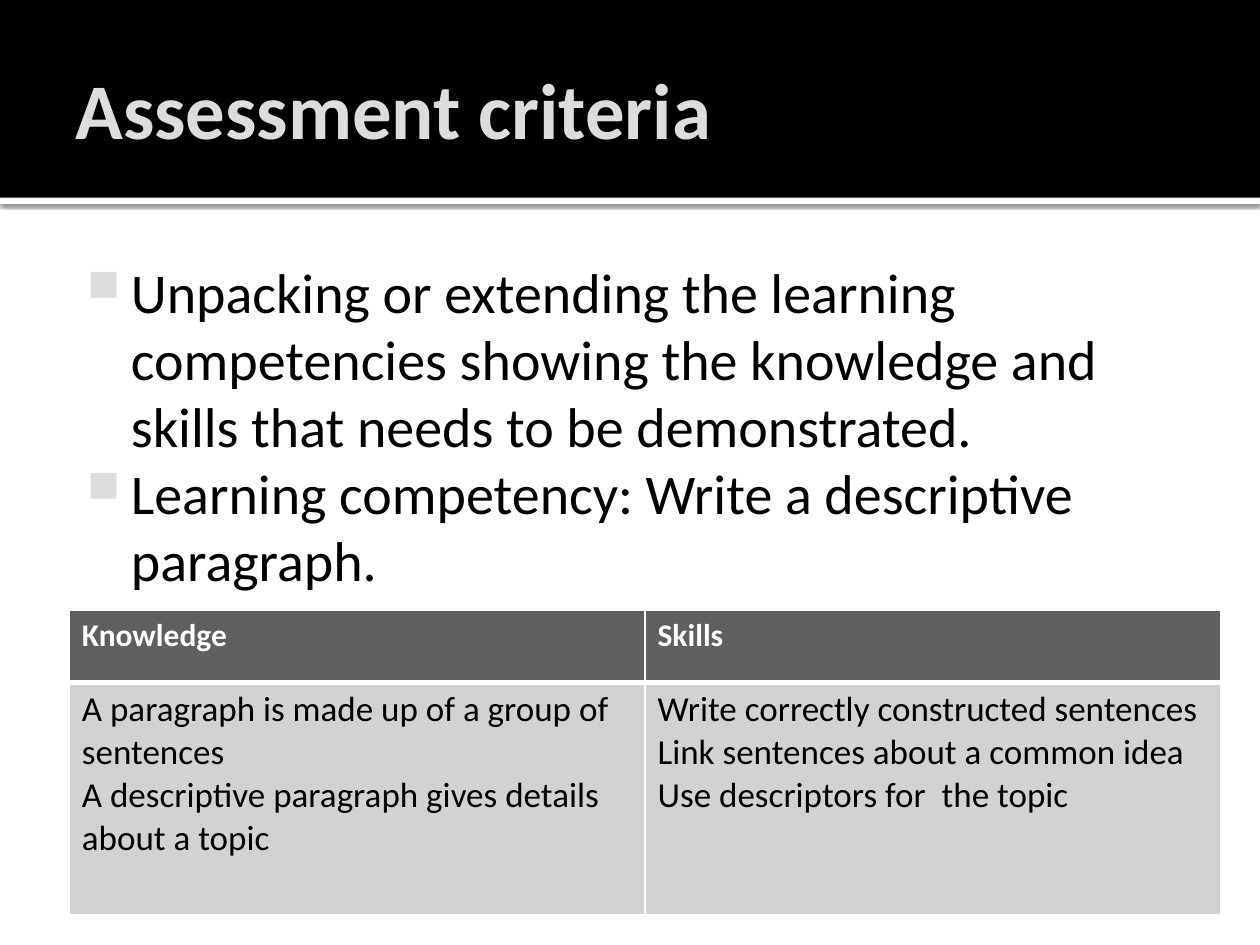
"""Build the assessment criteria slide: title band, two bullets and a table."""
from dataclasses import dataclass
from typing import Any

from lxml import etree
from pptx import Presentation
from pptx.dml.color import RGBColor
from pptx.enum import shapes, text
from pptx.oxml import parse_xml
from pptx.oxml.ns import nsdecls, qn
from pptx.util import Pt


@dataclass(frozen=True)
class Theme:
    font: str = "Calibri"
    black: str = "000000"
    white: str = "FFFFFF"
    pale: str = "DDDDDD"
    header: str = "5F5F5F"
    cell: str = "D2D2D2"
    title_size: float = 45
    body_size: float = 32
    header_size: float = 18
    cell_size: float = 20


@dataclass(frozen=True)
class Box:
    left: float
    top: float
    width: float
    height: float

    def lengths(self) -> tuple:
        return tuple(Pt(v) for v in (self.left, self.top, self.width, self.height))


@dataclass(frozen=True)
class Band:
    box: Box
    color: str
    shadow: bool = False


@dataclass(frozen=True)
class Row:
    height: float
    fill: str
    size: float
    color: str
    bold: bool
    borders: dict
    cells: tuple


T = Theme()
BANDS = (
    Band(Box(0, 113, 720, 3.6), T.white, shadow=True),
    Band(Box(0, 0, 720, 113), T.black),
)
TITLE_BOX = Box(36, 12.2, 648, 98.6)
BODY_BOX = Box(36, 139.7, 648, 364.3)
TABLE_BOX = Box(39.6, 348.5, 658, 174.4)
BULLETS = (
    "Unpacking or extending the learning competencies showing the knowledge "
    "and skills that needs to be demonstrated.",
    "Learning competency: Write a descriptive paragraph.",
)
ROWS = (
    Row(41.4, T.header, T.header_size, T.white, True,
        {"L": 1, "R": 1, "T": 1, "B": 3}, (("Knowledge",), ("Skills",))),
    Row(133, T.cell, T.cell_size, T.black, False,
        {"L": 1, "R": 1, "T": 3, "B": 1},
        (("A paragraph is made up of a group of sentences",
          "A descriptive paragraph gives details about a topic"),
         ("Write correctly constructed sentences",
          "Link sentences about a common idea",
          "Use descriptors for  the topic"))),
)


def apply(obj: Any, values: dict) -> None:
    for name, value in values.items():
        setattr(obj, name, value)


def write(tf: Any, lines: tuple, size: float, color: str, bold: bool) -> None:
    for i, line in enumerate(lines):
        p = tf.paragraphs[0] if i == 0 else tf.add_paragraph()
        r = p.add_run()
        r.text = line
        apply(r.font, {"name": T.font, "size": Pt(size), "bold": bold})
        r.font.color.rgb = RGBColor.from_string(color)


def frame(tf: Any, anchor: Any, insets: tuple) -> None:
    names = ("margin_left", "margin_top", "margin_right", "margin_bottom")
    apply(tf, {"word_wrap": True, "auto_size": text.MSO_AUTO_SIZE.NONE,
               "vertical_anchor": anchor, **dict(zip(names, map(Pt, insets)))})


def add_band(s: Any, band: Band) -> None:
    sp = s.shapes.add_shape(shapes.MSO_SHAPE.RECTANGLE, *band.box.lengths())
    sp.fill.solid()
    sp.fill.fore_color.rgb = RGBColor.from_string(band.color)
    sp.line.fill.background()
    sp.shadow.inherit = False
    if band.shadow:
        effects = sp.element.spPr.find(qn("a:effectLst"))
        effects.append(parse_xml(
            f'<a:outerShdw {nsdecls("a")} blurRad="{Pt(2.5)}" dist="{Pt(0.8)}" '
            f'dir="5400000" algn="tl" rotWithShape="0"><a:srgbClr val="{T.black}">'
            '<a:alpha val="60000"/></a:srgbClr></a:outerShdw>'))


def add_title(s: Any, title: str) -> None:
    sp = s.shapes.title
    apply(sp, dict(zip(("left", "top", "width", "height"), TITLE_BOX.lengths())))
    frame(sp.text_frame, text.MSO_ANCHOR.MIDDLE, (7.2, 3.6, 3.6, 3.6))
    write(sp.text_frame, (title,), T.title_size, T.pale, True)
    sp.text_frame.paragraphs[0].alignment = text.PP_ALIGN.LEFT
    sp.element.getparent().append(sp.element)


def add_bullets(s: Any, lines: tuple) -> None:
    tf = s.shapes.add_textbox(*BODY_BOX.lengths()).text_frame
    frame(tf, text.MSO_ANCHOR.TOP, (4.3, 7.2, 7.2, 3.6))
    write(tf, lines, T.body_size, T.black, False)
    for p in tf.paragraphs:
        pr = p._p.get_or_add_pPr()
        pr.set("marL", str(Pt(34.5)))
        pr.set("indent", str(Pt(-25.2)))
        color = etree.SubElement(pr, qn("a:buClr"))
        etree.SubElement(color, qn("a:srgbClr"), val=T.pale)
        etree.SubElement(pr, qn("a:buSzPct"), val="80000")
        etree.SubElement(pr, qn("a:buChar"), char="■")


def add_border(cell: Any, side: str, width: float) -> None:
    pr = cell._tc.get_or_add_tcPr()
    ln = etree.SubElement(pr, qn(f"a:ln{side}"), w=str(Pt(width)))
    fill = etree.SubElement(ln, qn("a:solidFill"))
    etree.SubElement(fill, qn("a:srgbClr"), val=T.white)


def add_criteria(s: Any, rows: tuple) -> None:
    count = len(rows[0].cells)
    table = s.shapes.add_table(len(rows), count, *TABLE_BOX.lengths()).table
    table.horz_banding = False
    for col in table.columns:
        col.width = Pt(TABLE_BOX.width / count)
    for i, row in enumerate(rows):
        table.rows[i].height = Pt(row.height)
        for cell, lines in zip(table.rows[i].cells, row.cells):
            for side, width in row.borders.items():
                add_border(cell, side, width)
            cell.fill.solid()
            cell.fill.fore_color.rgb = RGBColor.from_string(row.fill)
            write(cell.text_frame, lines, row.size, row.color, row.bold)


def main() -> None:
    prs = Presentation()
    apply(prs, {"slide_width": Pt(720), "slide_height": Pt(540)})
    s = prs.slides.add_slide(prs.slide_layouts[5])
    for band in BANDS:
        add_band(s, band)
    add_title(s, "Assessment criteria")
    add_bullets(s, BULLETS)
    add_criteria(s, ROWS)
    prs.save("out.pptx")


if __name__ == "__main__":
    main()
